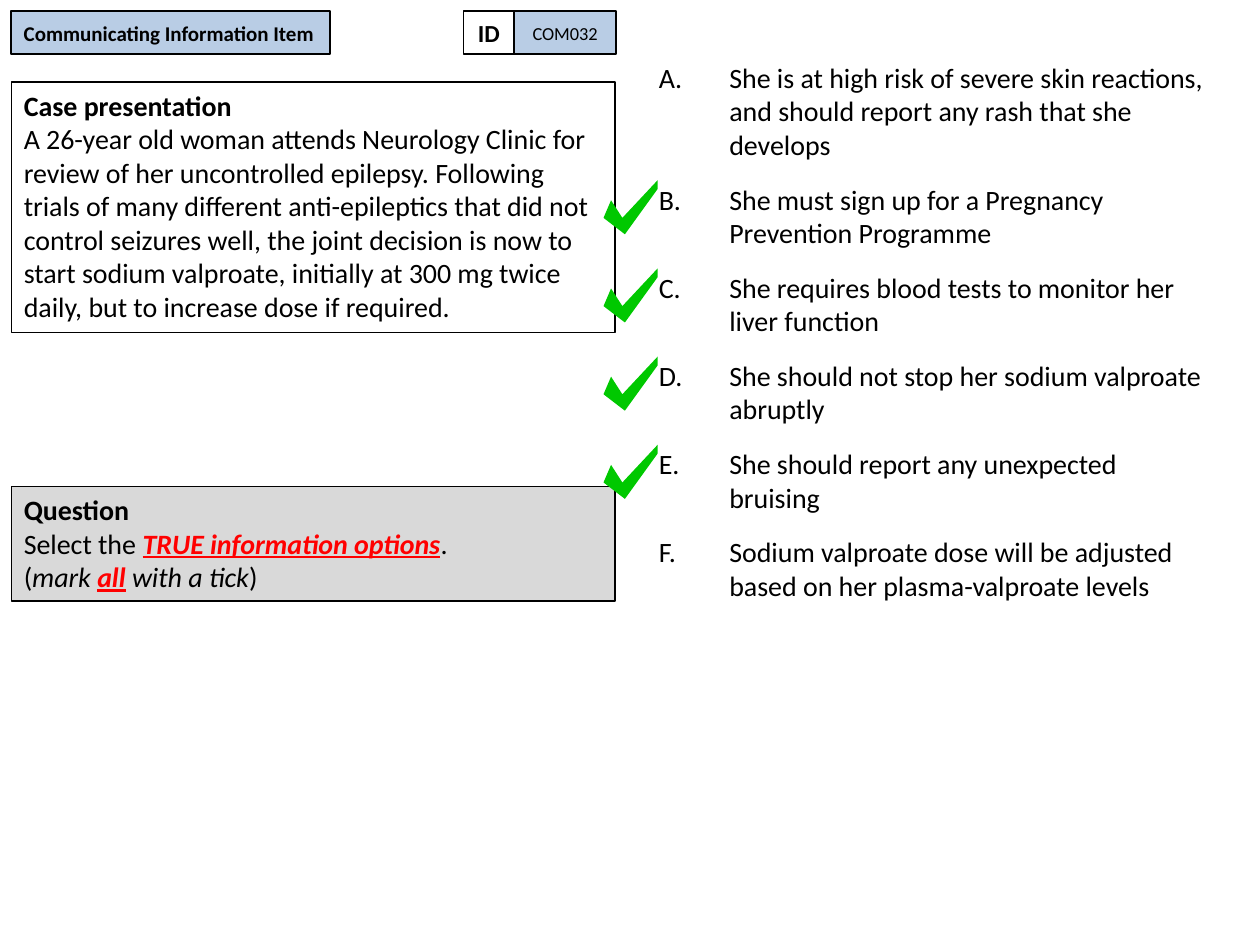
import pptx
import pptx.dml.color
import pptx.enum.shapes
import pptx.enum.text
import pptx.util
from lxml import etree

Inches = pptx.util.Inches
Pt = pptx.util.Pt
ALIGN = pptx.enum.text.PP_ALIGN
ANCHOR = pptx.enum.text.MSO_ANCHOR


def color(value):
    return pptx.dml.color.RGBColor.from_string(value)


def add_text(para, text, size, **formats):
    span = para.add_run()
    span.text = text
    span.font.color.rgb = color(formats.pop("color", "000000"))
    values = {"name": "Calibri", "size": Pt(size), **formats}
    for name, value in values.items():
        setattr(span.font, name, value)


deck = pptx.Presentation()
deck.slide_width = Inches(10)
deck.slide_height = Inches(7.5)
page = deck.slides.add_slide(deck.slide_layouts[6])

options = [
    "She is at high risk of severe skin reactions, and should report any rash that she develops",
    "She must sign up for a Pregnancy Prevention Programme",
    "She requires blood tests to monitor her liver function",
    "She should not stop her sodium valproate abruptly",
    "She should report any unexpected bruising",
    "Sodium valproate dose will be adjusted based on her plasma-valproate levels",
]
answers = page.shapes.add_textbox(Inches(5.13), Inches(0.43), Inches(4.59), Inches(6.27))
answers.text_frame.word_wrap = True
for index, option in enumerate(options):
    para = answers.text_frame.paragraphs[0] if index == 0 else answers.text_frame.add_paragraph()
    properties = para._p.get_or_add_pPr()
    properties.set("marL", str(Inches(0.56)))
    properties.set("indent", str(Inches(-0.56)))
    bullet = etree.SubElement(properties, pptx.oxml.ns.qn("a:buAutoNum"))
    bullet.set("type", "alphaUcPeriod")
    para.space_before = Pt(12 if index else 0)
    add_text(para, option, 16)

bold = {"bold": True}
italic = {"italic": True}
key = {"bold": True, "underline": True, "italic": True, "color": "FF0000"}
case_text = (
    "A 26-year old woman attends Neurology Clinic for review of her uncontrolled epilepsy. "
    "Following trials of many different anti-epileptics that did not control seizures well, "
    "the joint decision is now to start sodium valproate, initially at 300 mg twice daily, "
    "but to increase dose if required."
)
case = [[("Case presentation", bold)], [(case_text, {})]]
question = [
    [("Question", bold)],
    [("Select the ", {}), ("TRUE information options", key), (".", {})],
    [("(", {}), ("mark ", italic), ("all", key), (" with a tick", italic), (")", {})],
]
panels = [
    (0.09, 0.09, 2.53, 0.34, "B9CDE5", 1, 12, ALIGN.LEFT, ANCHOR.MIDDLE,
     [[("Communicating Information Item", bold)]]),
    (4.08, 0.09, 0.81, 0.34, "B9CDE5", 1, 10.5, ALIGN.CENTER, ANCHOR.MIDDLE, [[("COM032", {})]]),
    (3.68, 0.09, 0.4, 0.34, None, 1, 14, ALIGN.CENTER, ANCHOR.MIDDLE, [[("ID", bold)]]),
    (0.09, 0.65, 4.79, 1.99, None, 0.75, 16, ALIGN.LEFT, ANCHOR.TOP, case),
    (0.09, 3.86, 4.79, 0.91, "D9D9D9", 0.75, 16, ALIGN.LEFT, ANCHOR.TOP, question),
]
for left, top, width, height, fill, line, size, align, anchor, lines in panels:
    box = page.shapes.add_shape(
        pptx.enum.shapes.MSO_SHAPE.RECTANGLE,
        Inches(left), Inches(top), Inches(width), Inches(height),
    )
    box.shadow.inherit = False
    if fill:
        box.fill.solid()
        box.fill.fore_color.rgb = color(fill)
    else:
        box.fill.background()
    box.line.color.rgb = color("000000")
    box.line.width = Pt(line)
    frame = box.text_frame
    frame.word_wrap = True
    frame.vertical_anchor = anchor
    if anchor == ANCHOR.TOP:
        frame.auto_size = pptx.enum.text.MSO_AUTO_SIZE.SHAPE_TO_FIT_TEXT
    for index, spans in enumerate(lines):
        para = frame.paragraphs[0] if index == 0 else frame.add_paragraph()
        para.alignment = align
        for text, formats in spans:
            add_text(para, text, size, **formats)

tick_points = [(0.06, 0.16), (0, 0.3), (0.17, 0.43), (0.43, 0.07), (0.43, 0), (0.15, 0.3)]
for row in range(4):
    points = [(Inches(4.79 + x), Inches(1.43 + 0.7 * row + y)) for x, y in tick_points]
    outline = page.shapes.build_freeform(*points[0])
    outline.add_line_segments(points[1:], close=True)
    tick = outline.convert_to_shape()
    tick.shadow.inherit = False
    tick.fill.solid()
    tick.fill.fore_color.rgb = color("00C800")
    tick.line.fill.background()

deck.save("out.pptx")
